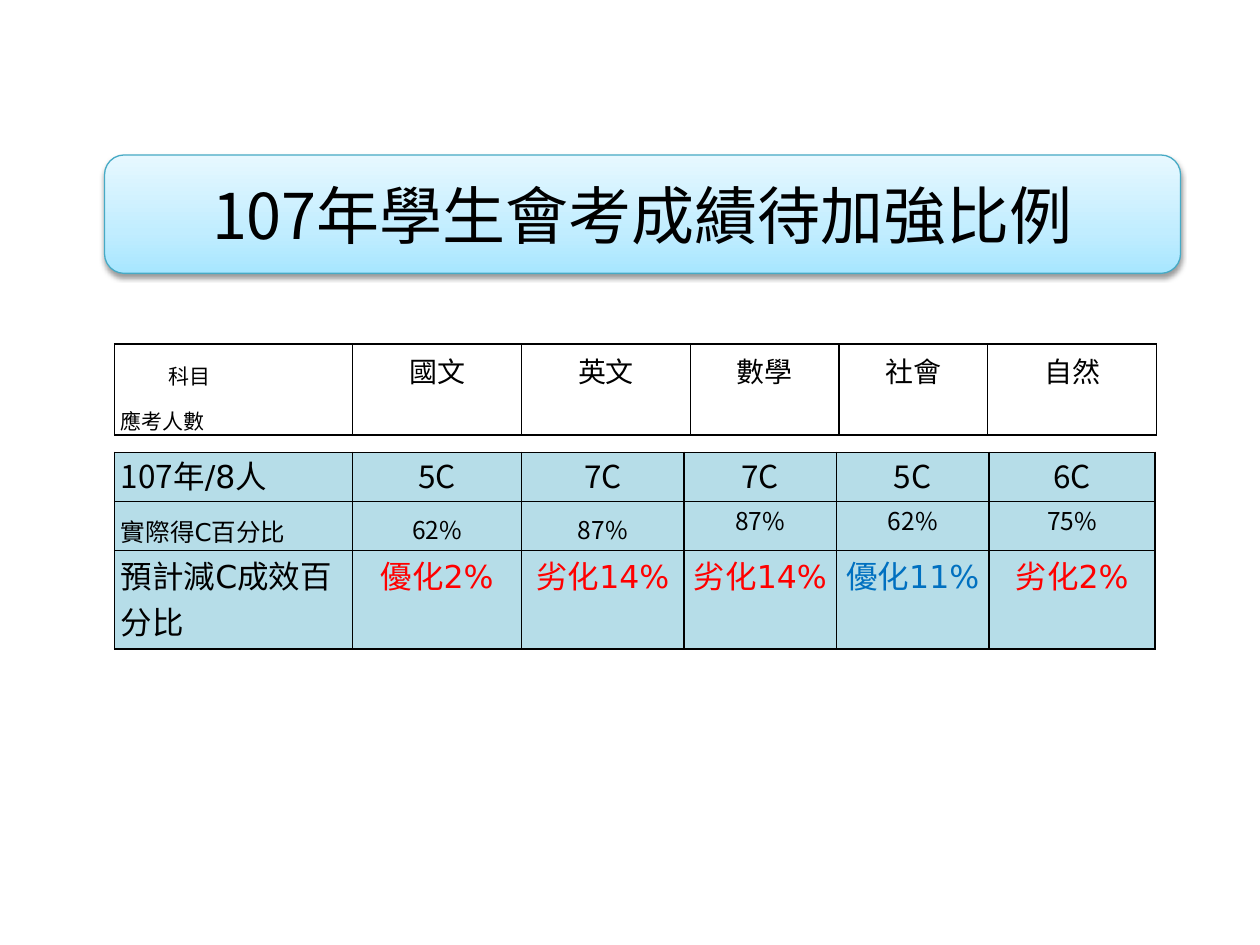
from dataclasses import dataclass

from lxml import etree
from pptx import Presentation, util as u
from pptx.dml.color import RGBColor
from pptx.enum import shapes, text
from pptx.oxml import parse_xml
from pptx.oxml.ns import nsdecls, qn

NOTO, DEJA = "Noto Sans CJK SC", "DejaVu Sans"
BLACK, RED, BLUE, TEAL = "000000", "FF0000", "0070C0", "B6DDE8"
WIDE, HIGH = u.Inches(10), u.Inches(7.5)


@dataclass
class Span:
    words: str
    font: str


@dataclass
class Line:
    spans: list[Span]
    size: float
    color: str = BLACK
    mid: bool = True
    lead: float | None = 26
    dent: float = 0


@dataclass
class Grid:
    left: float
    top: float
    cols: list[float]
    rows: list[float]
    cells: list[list[list[Line]]]
    fill: str | None = None


def across(share: float) -> int:
    return round(WIDE * share / 100)


def down(share: float) -> int:
    return round(HIGH * share / 100)


def paint(target, code: str) -> None:
    target.rgb = RGBColor.from_string(code)


def write(frame, lines: list[Line]) -> None:
    for num, line in enumerate(lines):
        para = frame.add_paragraph() if num else frame.paragraphs[0]
        para.alignment = text.PP_ALIGN.CENTER if line.mid else text.PP_ALIGN.LEFT
        if line.lead:
            para.line_spacing = u.Pt(line.lead)
        if line.dent:
            props = para._p.get_or_add_pPr()
            props.set("marL", str(across(line.dent)))
            props.set("indent", "0")
        for span in line.spans:
            run = para.add_run()
            run.text = span.words
            run.font.size = u.Pt(line.size)
            run.font.name = span.font
            paint(run.font.color, line.color)
            east = etree.Element(qn("a:ea"), typeface=span.font)
            run._r.rPr.find(qn("a:latin")).addnext(east)


def frame(cell) -> None:
    props = cell._tc.get_or_add_tcPr()
    for num, side in enumerate(("lnL", "lnR", "lnT", "lnB")):
        props.insert(num, parse_xml(
            f'<a:{side} {nsdecls("a")} w="12700"><a:solidFill>'
            f'<a:srgbClr val="{BLACK}"/></a:solidFill></a:{side}>'))


def table(slide, grid: Grid) -> None:
    obj = slide.shapes.add_table(
        len(grid.rows), len(grid.cols), across(grid.left), down(grid.top),
        across(sum(grid.cols)), down(sum(grid.rows))).table
    obj.first_row = obj.horz_banding = False
    for col, wide in zip(obj.columns, grid.cols):
        col.width = across(wide)
    for row, high, cells in zip(obj.rows, grid.rows, grid.cells):
        row.height = down(high)
        for cell, lines in zip(row.cells, cells):
            cell.margin_left = cell.margin_right = u.Inches(0.05)
            cell.margin_top = cell.margin_bottom = 0
            if grid.fill:
                cell.fill.solid()
                paint(cell.fill.fore_color, grid.fill)
            else:
                cell.fill.background()
            frame(cell)
            write(cell.text_frame, lines)


def banner(slide, words: str) -> None:
    box = slide.shapes.add_shape(
        shapes.MSO_SHAPE.ROUNDED_RECTANGLE,
        across(8.3), down(16.4), across(85.4), down(12.53))
    paint(box.line.color, "46AAC5")
    box.line.width = u.Pt(0.75)
    stops = "".join(
        f'<a:gs pos="{pos * 1000}"><a:srgbClr val="{code}"/></a:gs>'
        for pos, code in ((0, "A7E6FF"), (35, "C1EDFF"), (100, "E7F8FF")))
    props = box._element.spPr
    props.find(qn("a:prstGeom")).addnext(parse_xml(
        f'<a:gradFill {nsdecls("a")} rotWithShape="1"><a:gsLst>{stops}</a:gsLst>'
        '<a:lin ang="16200000" scaled="0"/></a:gradFill>'))
    props.append(parse_xml(
        f'<a:effectLst {nsdecls("a")}><a:outerShdw blurRad="40000" dist="20000" '
        'dir="5400000" rotWithShape="0"><a:srgbClr val="000000">'
        '<a:alpha val="38000"/></a:srgbClr></a:outerShdw></a:effectLst>'))
    box.text_frame.word_wrap = True
    box.text_frame.vertical_anchor = text.MSO_ANCHOR.MIDDLE
    write(box.text_frame, [Line([Span(words, NOTO)], 36, lead=None)])


def one(words: str, size: float, font: str = DEJA, **more) -> list[Line]:
    return [Line([Span(words, font)], size, **more)]


def main() -> None:
    deck = Presentation()
    deck.slide_width, deck.slide_height = WIDE, HIGH
    slide = deck.slides.add_slide(deck.slide_layouts[6])

    count = [[Line([Span("107", NOTO), Span("年/8人", DEJA)], 18, mid=False)]]
    count += [one(mark, 18, NOTO) for mark in ("5C", "7C", "7C", "5C", "6C")]
    rate = [one("實際得C百分比", 14, mid=False)]
    rate += [one(mark, 14, NOTO, lead=lead) for mark, lead in (
        ("62%", 26), ("87%", 26), ("87%", None), ("62%", None), ("75%", None))]
    change = [one("預計減C成效百分比", 18, mid=False)]
    change += [one(mark, 18, color=color) for mark, color in (
        ("優化2%", RED), ("劣化14%", RED), ("劣化14%", RED),
        ("優化11%", BLUE), ("劣化2%", RED))]
    table(slide, Grid(9.1, 47.87, [18.9, 13.4, 12.9, 12.1, 12.1, 13.2],
                      [5.2, 5.2, 10.4], [count, rate, change], TEAL))

    head = [one("科目", 12, mid=False, dent=3.8) + one("應考人數", 12, mid=False)]
    head += [one(name, 16) for name in ("國文", "英文", "數學", "社會", "自然")]
    table(slide, Grid(9.1, 36.4, [18.9, 13.4, 13.4, 11.8, 11.8, 13.4],
                      [9.63], [head]))

    banner(slide, "107年學生會考成績待加強比例")
    deck.save("out.pptx")


if __name__ == "__main__":
    main()
